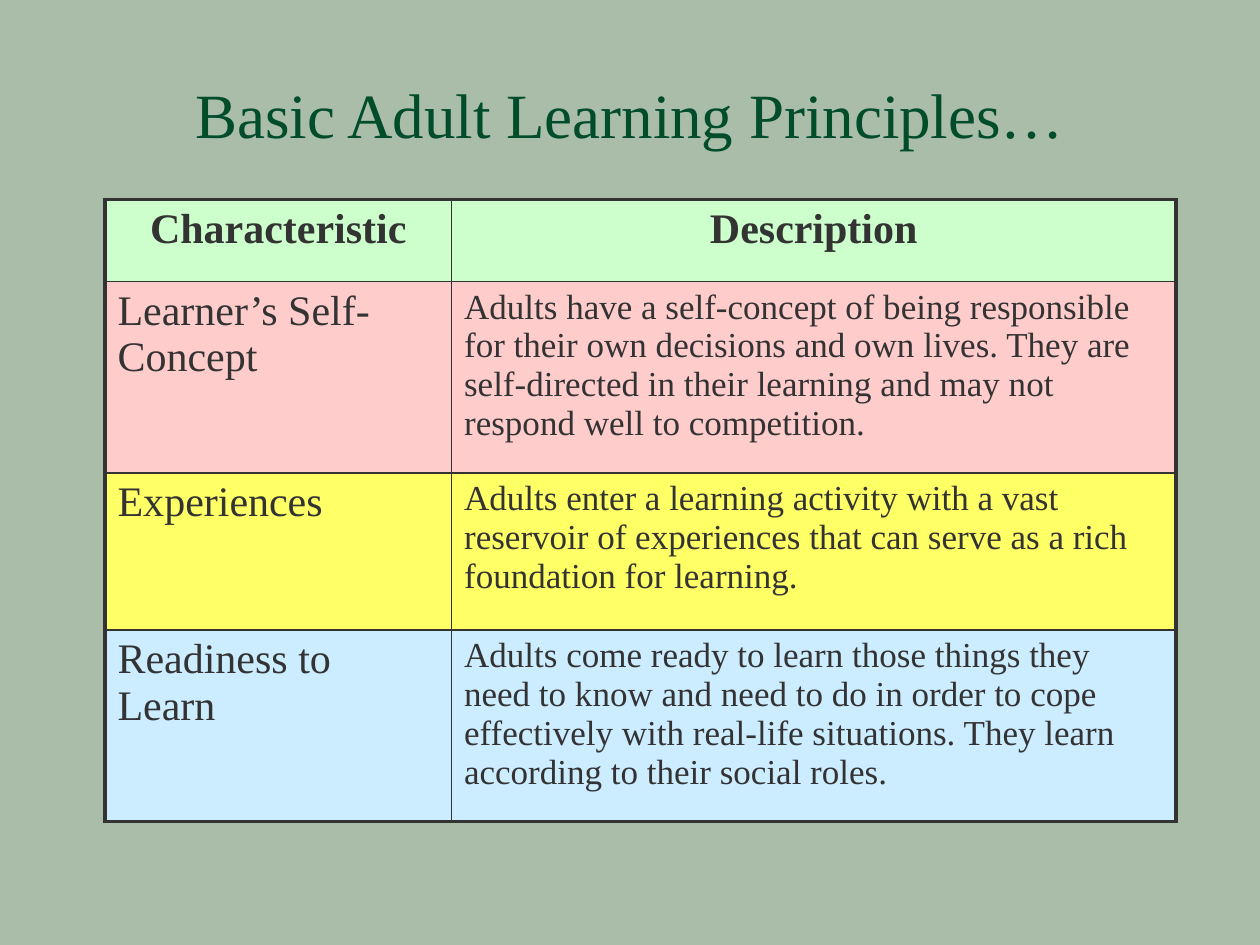
import dataclasses

import lxml.etree
import pptx
import pptx.dml.color
import pptx.enum.text
import pptx.oxml.ns
import pptx.util

Pt = pptx.util.Pt
RGB = pptx.dml.color.RGBColor.from_string
Align = pptx.enum.text.PP_ALIGN
Anchor = pptx.enum.text.MSO_ANCHOR


@dataclasses.dataclass(frozen=True)
class Theme:
    font: str = "Times New Roman"
    back: str = "A9BDA9"
    title: str = "004C2B"
    ink: str = "333333"
    green: str = "CCFFCC"
    pink: str = "FFCCCC"
    yellow: str = "FFFF66"
    blue: str = "CCECFF"
    head: float = 36
    term: float = 24
    body: float = 20
    thick: float = 2.25
    thin: float = 1


theme = Theme()


def write(frame, text, size=theme.body, color=theme.ink, bold=False, align=Align.LEFT):
    para = frame.paragraphs[0]
    para.text = text
    para.alignment = align
    font = para.runs[0].font
    font.name, font.size, font.bold = theme.font, Pt(size), bold
    font.color.rgb = RGB(color)


def border(cell, widths):
    """Draw the left, right, top and bottom lines, which must precede the fill."""
    qn = pptx.oxml.ns.qn
    props = cell._tc.get_or_add_tcPr()
    for spot, (side, width) in enumerate(zip("LRTB", widths)):
        line = lxml.etree.Element(qn(f"a:ln{side}"), w=str(Pt(width)))
        fill = lxml.etree.SubElement(line, qn("a:solidFill"))
        lxml.etree.SubElement(fill, qn("a:srgbClr"), val=theme.ink)
        props.insert(spot, line)


deck = pptx.Presentation()
deck.slide_width, deck.slide_height = Pt(720), Pt(540)
slide = deck.slides.add_slide(deck.slide_layouts[5])
slide.background.fill.solid()
slide.background.fill.fore_color.rgb = RGB(theme.back)

title = slide.shapes.title
title.left, title.top, title.width, title.height = Pt(54), Pt(30), Pt(612), Pt(60)
title.text_frame.vertical_anchor = Anchor.BOTTOM
write(title.text_frame, "Basic Adult Learning Principles…",
      size=theme.head, color=theme.title, align=Align.CENTER)

# Row height, fill, characteristic, description
rows = [
    (46.8, theme.green, "Characteristic", "Description"),
    (109.4, theme.pink, "Learner’s Self- Concept",
     "Adults have a self-concept of being responsible for their own decisions "
     "and own lives. They are self-directed in their learning and may not "
     "respond well to competition."),
    (89.8, theme.yellow, "Experiences",
     "Adults enter a learning activity with a vast reservoir of experiences "
     "that can serve as a rich foundation for learning."),
    (109.4, theme.blue, "Readiness to Learn",
     "Adults come ready to learn those things they need to know and need to do "
     "in order to cope effectively with real-life situations. They learn "
     "according to their social roles."),
]
cols = [198, 414]
high = sum(row[0] for row in rows)
table = slide.shapes.add_table(
    len(rows), len(cols), Pt(60), Pt(114), Pt(sum(cols)), Pt(high)).table
table.horz_banding = False
for col, width in zip(table.columns, cols):
    col.width = Pt(width)

for r, (height, fill, *texts) in enumerate(rows):
    table.rows[r].height = Pt(height)
    for c, text in enumerate(texts):
        cell = table.cell(r, c)
        cell.fill.solid()
        cell.fill.fore_color.rgb = RGB(fill)
        top = r == 0
        write(cell.text_frame, text,
              size=theme.term if top or c == 0 else theme.body,
              bold=top, align=Align.CENTER if top else Align.LEFT)
        outer = (c == 0, c == len(cols) - 1, top, r == len(rows) - 1)
        border(cell, [theme.thick if edge else theme.thin for edge in outer])

deck.save("out.pptx")
